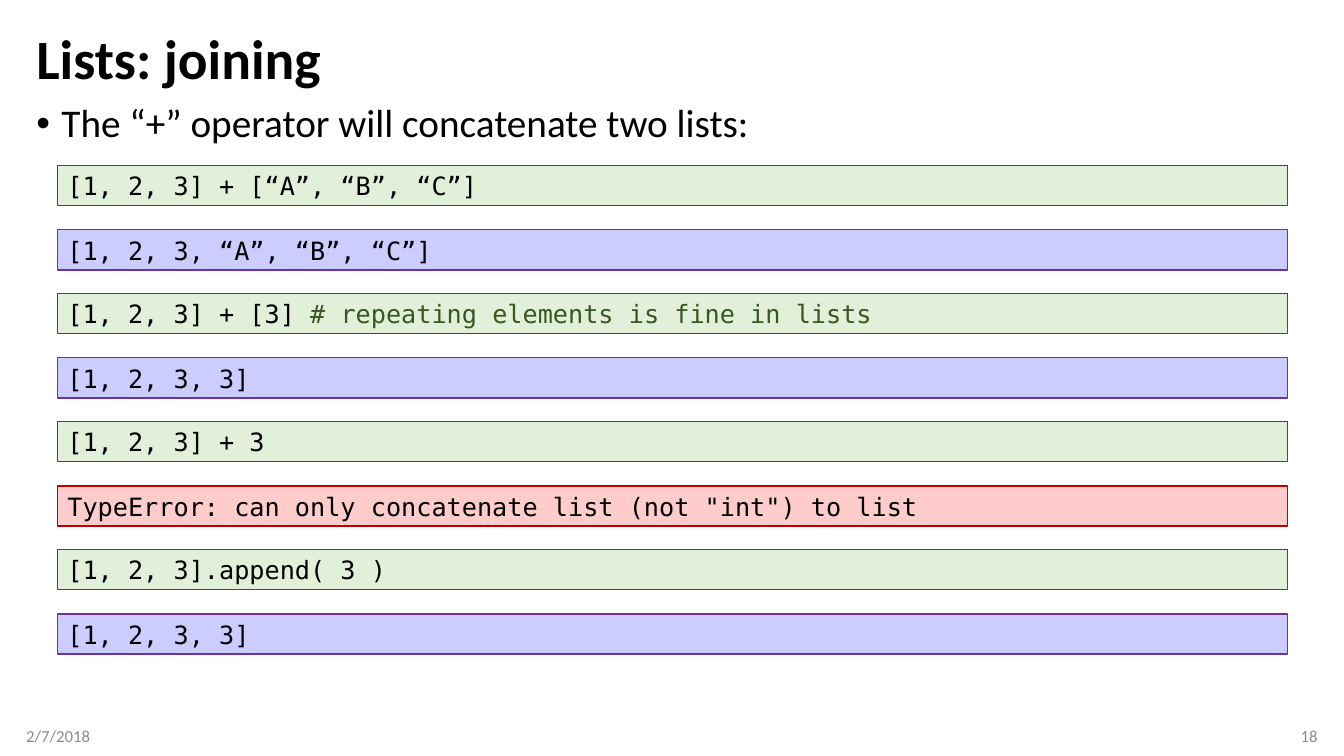
from lxml import etree
from pptx import Presentation
from pptx.dml.color import RGBColor
from pptx.enum.shapes import MSO_SHAPE
from pptx.enum.text import MSO_ANCHOR, MSO_AUTO_SIZE, PP_ALIGN
from pptx.oxml.ns import qn
from pptx.util import Pt

PX = 9144
RECT = MSO_SHAPE.RECTANGLE
MIDDLE, TOP = MSO_ANCHOR.MIDDLE, MSO_ANCHOR.TOP
LEFT, RIGHT = PP_ALIGN.LEFT, PP_ALIGN.RIGHT
NO_FIT = MSO_AUTO_SIZE.NONE
COLORS = {
    "text": "000000", "footer": "8C8C8C", "comment": "385723",
    "input": "E2F0D9", "input_line": "385723",
    "output": "CCCCFF", "output_line": "7030A0",
    "error": "FFCCCC", "error_line": "C00000",
}


def color(name):
    return RGBColor.from_string(COLORS[name])


def format_text(sp, size, font="Calibri", fill="text", align=LEFT, anchor=MIDDLE):
    tf = sp.text_frame
    tf.word_wrap = True
    tf.auto_size = NO_FIT
    tf.vertical_anchor = anchor
    p = tf.paragraphs[0]
    p.alignment = align
    p.font.size = Pt(size)
    p.font.name = font
    p.font.color.rgb = color(fill)
    return p


prs = Presentation()
prs.slide_width, prs.slide_height = 1333 * PX, 750 * PX
s = prs.slides.add_slide(prs.slide_layouts[1])

title, body = s.placeholders
for sp, text, y, h in (
    (title, "Lists: joining", 25, 72),
    (body, "The “+” operator will concatenate two lists:", 98, 47),
):
    sp.left, sp.top, sp.width, sp.height = 26 * PX, y * PX, 1281 * PX, h * PX
    sp.text_frame.text = text

p = format_text(title, 39.6)
p.font.bold = True
p.line_spacing = 0.9

p = format_text(body, 28, anchor=TOP)
p.line_spacing = 0.9
p.space_before = Pt(10)
pPr = p._p.get_or_add_pPr()
pPr.set("marL", str(25 * PX))
pPr.set("indent", str(-25 * PX))
bullet = etree.Element(qn("a:buChar"), char="•")
pPr.find(qn("a:defRPr")).addprevious(bullet)

for text, x, align in (("2/7/2018", 26, LEFT), ("18", 1007, RIGHT)):
    sp = s.shapes.add_textbox(x * PX, 710 * PX, 300 * PX, 40 * PX)
    tf = sp.text_frame
    tf.text = text
    if align == LEFT:
        tf.margin_left = 0
    else:
        tf.margin_right = 0
    format_text(sp, 12, fill="footer", align=align)

code_rows = [
    ("input", "[1, 2, 3] + [“A”, “B”, “C”]", ""),
    ("output", "[1, 2, 3, “A”, “B”, “C”]", ""),
    ("input", "[1, 2, 3] + [3] ", "# repeating elements is fine in lists"),
    ("output", "[1, 2, 3, 3]", ""),
    ("input", "[1, 2, 3] + 3", ""),
    ("error", 'TypeError: can only concatenate list (not "int") to list', ""),
    ("input", "[1, 2, 3].append( 3 )", ""),
    ("output", "[1, 2, 3, 3]", ""),
]
first_top, last_top = 164, 609
pitch = (last_top - first_top) / (len(code_rows) - 1)
for i, (kind, code, comment) in enumerate(code_rows):
    y = round(first_top + i * pitch)
    sp = s.shapes.add_shape(RECT, 57 * PX, y * PX, 1220 * PX, 40 * PX)
    sp.shadow.inherit = False
    sp.fill.solid()
    sp.fill.fore_color.rgb = color(kind)
    sp.line.color.rgb = color(kind + "_line")
    sp.line.width = Pt(1)
    sp.text_frame.text = code
    p = format_text(sp, 18, "DejaVu Sans Mono")
    if comment:
        r = p.add_run()
        r.text = comment
        r.font.color.rgb = color("comment")

prs.save("out.pptx")
